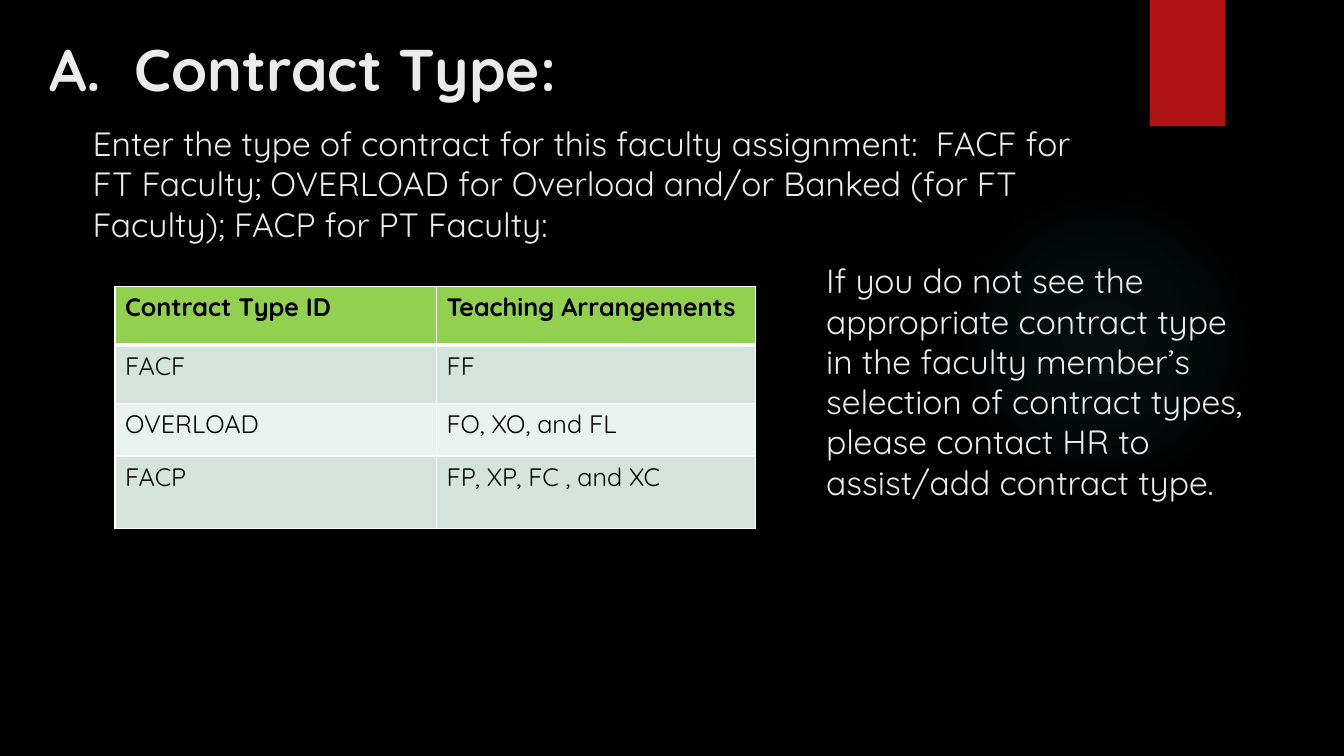
from dataclasses import dataclass

from lxml.etree import SubElement
from pptx import Presentation
from pptx.dml.color import RGBColor
from pptx.enum.shapes import MSO_SHAPE as Preset
from pptx.enum.text import MSO_ANCHOR as Anchor, MSO_AUTO_SIZE as AutoSize, PP_ALIGN as Align
from pptx.oxml import parse_xml
from pptx.oxml.ns import nsdecls, qn
from pptx.util import Cm, Pt

FONT = "Quicksand"
COLORS = {
    "background": "000000",
    "text": "EBEBEB",
    "ribbon": "B01513",
    "glow": "50B9C1",
    "header": "92D050",
    "band_dark": "D4E3DB",
    "band_light": "EBF1EE",
    "border": "FFFFFF",
    "table_text": "000000",
}
GLOW_STOPS = ((0, 7), (36, 6), (69, 0))


@dataclass(frozen=True)
class Box:
    left: float
    top: float
    width: float
    height: float

    def lengths(self):
        return Cm(self.left), Cm(self.top), Cm(self.width), Cm(self.height)


@dataclass(frozen=True)
class TextBlock:
    box: Box
    text: str
    size: int = 24
    bold: bool = False


@dataclass(frozen=True)
class TableRow:
    height: float
    fill: str
    cells: tuple[str, str]


GLOW = Box(23.9, 4.65, 7.82, 7.82)
RIBBON = Box(28.98, 0, 1.9, 3.18)
INSTRUCTION = TextBlock(
    Box(2.08, 2.97, 26.14, 3.45),
    "Enter the type of contract for this faculty assignment:  FACF for FT Faculty; "
    "OVERLOAD for Overload and/or Banked (for FT Faculty); FACP for PT Faculty:",
)
TEXT_BLOCKS = (
    TextBlock(
        Box(20.57, 6.43, 11.3, 8.18),
        "If you do not see the appropriate contract type in the faculty member’s "
        "selection of contract types, please contact HR to assist/add contract type.",
    ),
    TextBlock(Box(0.99, 0.71, 16.33, 2.13), "A.  Contract Type:", 42, True),
)
TABLE_LEFT, TABLE_TOP = 2.9, 7.21
COLUMN_WIDTHS = (8.1, 8.03)
TABLE_ROWS = (
    TableRow(1.48, "header", ("Contract Type ID", "Teaching Arrangements")),
    TableRow(1.48, "band_dark", ("FACF", "FF")),
    TableRow(1.32, "band_light", ("OVERLOAD", "FO, XO, and FL")),
    TableRow(1.83, "band_dark", ("FACP", "FP, XP, FC , and XC")),
)


def color(name: str) -> RGBColor:
    return RGBColor.from_string(COLORS[name])


def format_font(paragraph, size: int, bold: bool, color_name: str) -> None:
    font = paragraph.font
    font.name = FONT
    font.size = Pt(size)
    font.bold = bold
    font.color.rgb = color(color_name)


def fill_text(shape, block: TextBlock) -> None:
    shape.left, shape.top, shape.width, shape.height = block.box.lengths()
    frame = shape.text_frame
    frame.word_wrap = True
    frame.auto_size = AutoSize.NONE
    frame.vertical_anchor = Anchor.TOP
    frame.text = block.text
    paragraph = frame.paragraphs[0]
    paragraph.alignment = Align.LEFT
    format_font(paragraph, block.size, block.bold, "text")


def add_plain_shape(slide, preset: Preset, box: Box):
    shape = slide.shapes.add_shape(preset, *box.lengths())
    shape.shadow.inherit = False
    shape.line.fill.background()
    return shape


def add_glow(slide) -> None:
    shape = add_plain_shape(slide, Preset.OVAL, GLOW)
    shape.fill.background()
    stops = "".join(
        f'<a:gs pos="{position * 1000}"><a:srgbClr val="{COLORS["glow"]}">'
        f'<a:alpha val="{alpha * 1000}"/></a:srgbClr></a:gs>'
        for position, alpha in GLOW_STOPS
    )
    gradient = parse_xml(
        f'<a:gradFill {nsdecls("a")} rotWithShape="1"><a:gsLst>{stops}</a:gsLst>'
        '<a:path path="circle"><a:fillToRect l="50000" t="50000" r="50000" b="50000"/>'
        "</a:path></a:gradFill>"
    )
    properties = shape._element.spPr
    properties.replace(properties.find(qn("a:noFill")), gradient)


def add_border(cell, side: str, points: int) -> None:
    properties = cell._tc.get_or_add_tcPr()
    line = SubElement(properties, qn(f"a:ln{side}"), w=str(Pt(points)))
    solid = SubElement(line, qn("a:solidFill"))
    SubElement(solid, qn("a:srgbClr"), val=COLORS["border"])


def add_contract_table(slide) -> None:
    box = Box(TABLE_LEFT, TABLE_TOP, sum(COLUMN_WIDTHS), sum(row.height for row in TABLE_ROWS))
    table = slide.shapes.add_table(len(TABLE_ROWS), len(COLUMN_WIDTHS), *box.lengths()).table
    for column, width in zip(table.columns, COLUMN_WIDTHS):
        column.width = Cm(width)
    for index, row in enumerate(TABLE_ROWS):
        table.rows[index].height = Cm(row.height)
        is_header = index == 0
        for cell, text in zip(table.rows[index].cells, row.cells):
            for side in "LRTB":
                meets_header = (side, index) in (("B", 0), ("T", 1))
                add_border(cell, side, 3 if meets_header else 1)
            cell.fill.solid()
            cell.fill.fore_color.rgb = color(row.fill)
            cell.text = text
            format_font(cell.text_frame.paragraphs[0], 18, is_header, "table_text")


def main() -> None:
    presentation = Presentation()
    presentation.slide_width = Cm(33.87)
    presentation.slide_height = Cm(19.05)
    slide = presentation.slides.add_slide(presentation.slide_layouts[5])
    slide.background.fill.solid()
    slide.background.fill.fore_color.rgb = color("background")

    add_glow(slide)
    ribbon = add_plain_shape(slide, Preset.RECTANGLE, RIBBON)
    ribbon.fill.solid()
    ribbon.fill.fore_color.rgb = color("ribbon")

    fill_text(slide.shapes.title, INSTRUCTION)
    for block in TEXT_BLOCKS:
        fill_text(slide.shapes.add_textbox(*block.box.lengths()), block)
    add_contract_table(slide)
    presentation.save("out.pptx")


if __name__ == "__main__":
    main()
